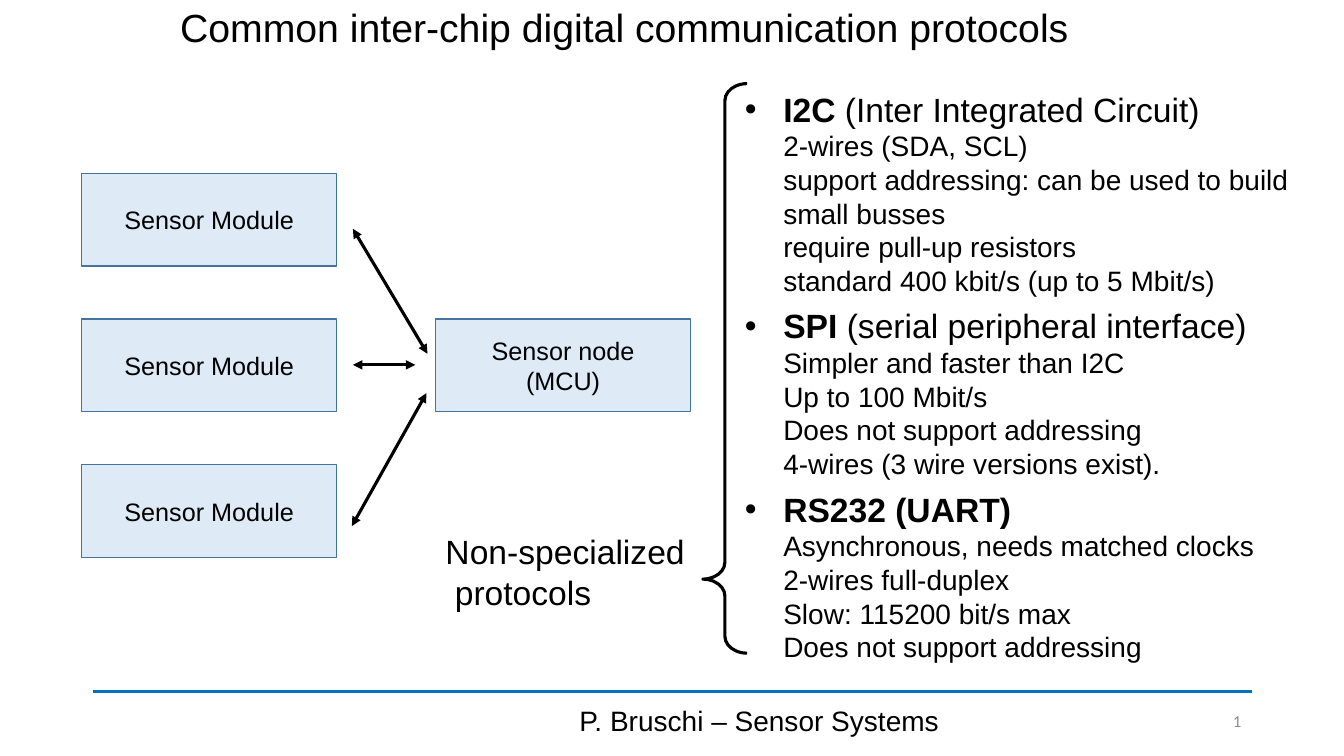
from dataclasses import dataclass

import lxml.etree
import pptx
import pptx.dml.color
import pptx.enum.shapes
import pptx.enum.text
import pptx.oxml.ns
import pptx.util

Inches = pptx.util.Inches
Pt = pptx.util.Pt
qn = pptx.oxml.ns.qn
Align = pptx.enum.text.PP_ALIGN
Anchor = pptx.enum.text.MSO_ANCHOR
AutoSize = pptx.enum.text.MSO_AUTO_SIZE
Preset = pptx.enum.shapes.MSO_SHAPE

BLACK = "000000"
BLOCK_FILL = "DEEBF7"
BLOCK_BORDER = "43739E"
RULE_BLUE = "0070C0"
NUMBER_GREY = "8C8C8C"


@dataclass
class Block:
    label: str
    left: float
    top: float


@dataclass
class Link:
    start: tuple[float, float]
    end: tuple[float, float]
    color: str = BLACK
    width: float = 2.25
    arrows: bool = True


@dataclass
class Label:
    text: str
    box: tuple[float, float, float, float]
    size: float
    align: Align = Align.LEFT
    font: str = "Arial"
    color: str = BLACK
    wrap: bool = True
    anchor: Anchor = Anchor.MIDDLE


@dataclass
class Protocol:
    name: str
    meaning: str
    features: list[str]


MODULE_LEFT, NODE_LEFT = 0.81, 4.32
MODULE_TOP, MODULE_STEP = 1.72, 1.445
BLOCK_WIDTH, BLOCK_HEIGHT = 2.53, 0.92

BLOCKS = [
    Block("Sensor Module", MODULE_LEFT, MODULE_TOP + row * MODULE_STEP)
    for row in range(3)
] + [Block("Sensor node\n(MCU)", NODE_LEFT, MODULE_TOP + MODULE_STEP)]

LINKS = [
    Link((0.92, 6.86), (12.42, 6.86), RULE_BLUE, 2.75, arrows=False),
    Link((3.5, 2.27), (4.24, 3.51)),
    Link((3.49, 5.22), (4.23, 3.9)),
    Link((3.5, 3.62), (4.12, 3.62)),
]

LABELS = [
    Label("P. Bruschi – Sensor Systems", (4.42, 6.95, 6.22, 0.4), 20, Align.CENTER),
    Label("1", (11.45, 6.95, 0.96, 0.4), 12, Align.RIGHT, "Calibri", NUMBER_GREY),
    Label("Non-specialized\v protocols", (4.32, 5.22, 2.58, 0.91), 24,
          wrap=False, anchor=Anchor.TOP),
]

PROTOCOLS = [
    Protocol("I2C", " (Inter Integrated Circuit)", [
        "2-wires (SDA, SCL)",
        "support addressing: can be used to build small busses",
        "require pull-up resistors",
        "standard 400 kbit/s (up to 5 Mbit/s)",
    ]),
    Protocol("SPI", " (serial peripheral interface)", [
        "Simpler and faster than I2C",
        "Up to 100 Mbit/s",
        "Does not support addressing",
        "4-wires (3 wire versions exist).",
    ]),
    Protocol("RS232 (UART)", "", [
        "Asynchronous, needs matched clocks",
        "2-wires full-duplex",
        "Slow: 115200 bit/s max",
        "Does not support addressing",
    ]),
]


def rgb(code: str) -> pptx.dml.color.RGBColor:
    return pptx.dml.color.RGBColor.from_string(code)


def style_run(run, size: float, font: str = "Arial", color: str = BLACK,
              bold: bool = False) -> None:
    run.font.size = Pt(size)
    run.font.name = font
    run.font.bold = bold
    run.font.color.rgb = rgb(color)


def write(frame, text: str, size: float, align: Align, font: str = "Arial",
          color: str = BLACK) -> None:
    frame.text = text
    for paragraph in frame.paragraphs:
        paragraph.alignment = align
        for run in paragraph.runs:
            style_run(run, size, font, color)


def draw_title(slide, text: str) -> None:
    title = slide.shapes.title
    title.left, title.top = Inches(0.44), Inches(-0.06)
    title.width, title.height = Inches(11.5), Inches(0.72)
    frame = title.text_frame
    write(frame, text, 28, Align.CENTER)
    frame.auto_size = AutoSize.NONE
    frame.vertical_anchor = Anchor.MIDDLE
    frame.paragraphs[0].line_spacing = 0.9


def draw_block(slide, block: Block) -> None:
    rectangle = slide.shapes.add_shape(
        Preset.RECTANGLE, Inches(block.left), Inches(block.top),
        Inches(BLOCK_WIDTH), Inches(BLOCK_HEIGHT))
    rectangle.shadow.inherit = False
    rectangle.fill.solid()
    rectangle.fill.fore_color.rgb = rgb(BLOCK_FILL)
    rectangle.line.color.rgb = rgb(BLOCK_BORDER)
    rectangle.line.width = Pt(1)
    rectangle.text_frame.vertical_anchor = Anchor.MIDDLE
    write(rectangle.text_frame, block.label, 18, Align.CENTER)


def draw_link(slide, link: Link) -> None:
    connector = slide.shapes.add_connector(
        pptx.enum.shapes.MSO_CONNECTOR.STRAIGHT,
        *map(Inches, link.start + link.end))
    connector.line.color.rgb = rgb(link.color)
    connector.line.width = Pt(link.width)
    properties = connector._element.spPr
    lxml.etree.SubElement(properties, qn("a:effectLst"))
    if link.arrows:
        outline = properties.find(qn("a:ln"))
        for end in ("a:headEnd", "a:tailEnd"):
            lxml.etree.SubElement(outline, qn(end), type="triangle")


def draw_label(slide, label: Label) -> None:
    frame = slide.shapes.add_textbox(*map(Inches, label.box)).text_frame
    frame.word_wrap = label.wrap
    frame.vertical_anchor = label.anchor
    write(frame, label.text, label.size, label.align, label.font, label.color)


def draw_brace(slide) -> None:
    brace = slide.shapes.add_shape(
        Preset.LEFT_BRACE, *map(Inches, (6.97, 0.83, 0.44, 5.65)))
    brace.adjustments[0] = 0.38
    brace.adjustments[1] = 0.87
    brace.shadow.inherit = False
    brace.fill.background()
    brace.line.color.rgb = rgb(BLACK)
    brace.line.width = Pt(2.25)


def write_protocol(paragraph, protocol: Protocol) -> None:
    paragraph.space_after = Pt(6)
    properties = paragraph._p.get_or_add_pPr()
    properties.set("marL", str(Inches(0.38)))
    properties.set("indent", str(Inches(-0.38)))
    lxml.etree.SubElement(properties, qn("a:buFont"), typeface="Arial")
    lxml.etree.SubElement(properties, qn("a:buChar"), char="•")
    pieces = [(protocol.name, 24, True)]
    if protocol.meaning:
        pieces.append((protocol.meaning, 24, False))
    for feature in protocol.features:
        pieces += [None, (feature, 20, False)]
    for piece in pieces:
        if piece is None:
            paragraph.add_line_break()
            continue
        text, size, bold = piece
        run = paragraph.add_run()
        run.text = text
        style_run(run, size, bold=bold)


def draw_protocols(slide) -> None:
    frame = slide.shapes.add_textbox(*map(Inches, (7.29, 0.83, 6.05, 5.86))).text_frame
    frame.word_wrap = True
    for index, protocol in enumerate(PROTOCOLS):
        write_protocol(frame.add_paragraph() if index else frame.paragraphs[0], protocol)


def main() -> None:
    deck = pptx.Presentation()
    deck.slide_width, deck.slide_height = Inches(13.33), Inches(7.5)
    slide = deck.slides.add_slide(deck.slide_layouts[5])
    draw_title(slide, "Common inter-chip digital communication protocols")
    for block in BLOCKS:
        draw_block(slide, block)
    for link in LINKS:
        draw_link(slide, link)
    draw_protocols(slide)
    draw_brace(slide)
    for label in LABELS:
        draw_label(slide, label)
    deck.save("out.pptx")


if __name__ == "__main__":
    main()
